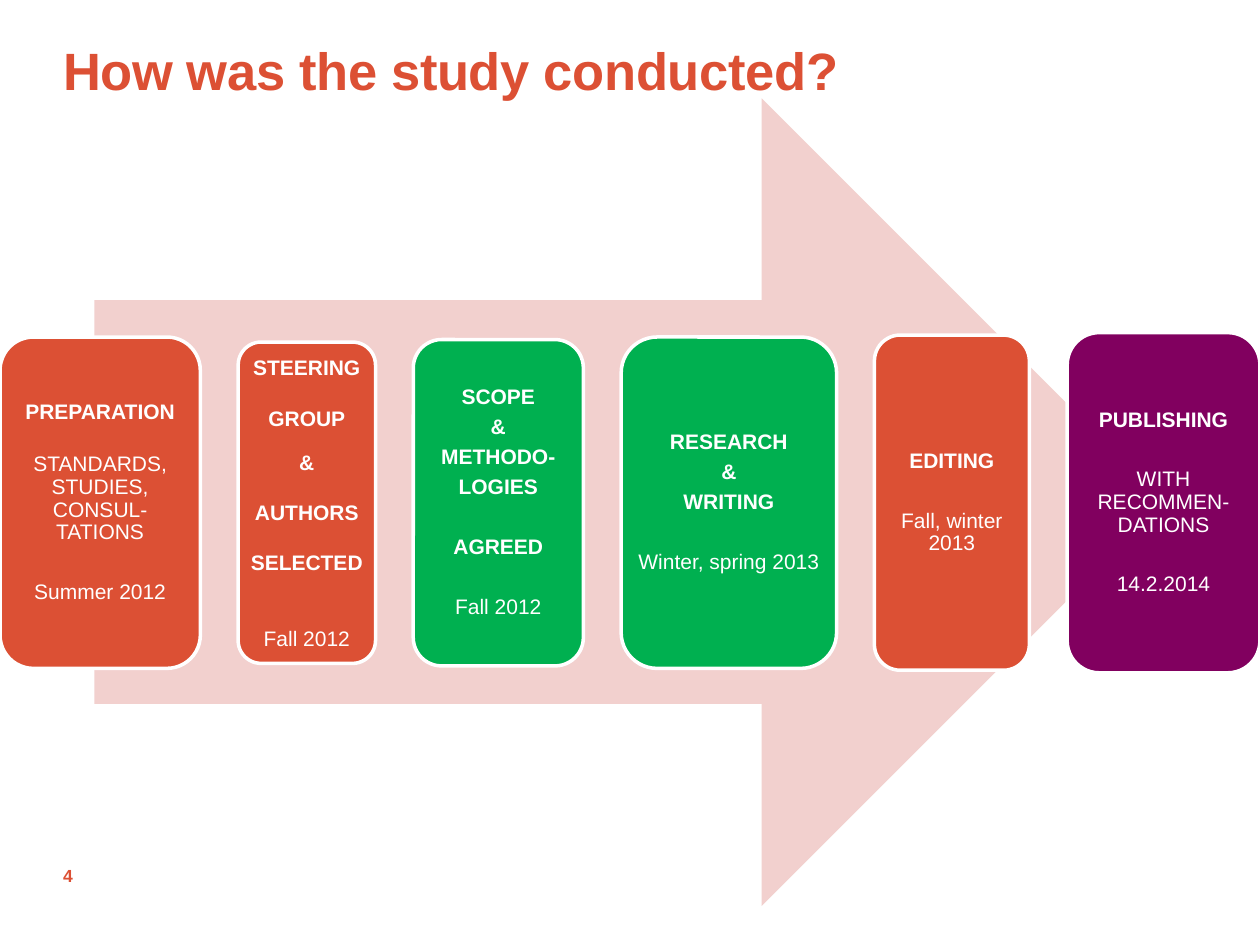
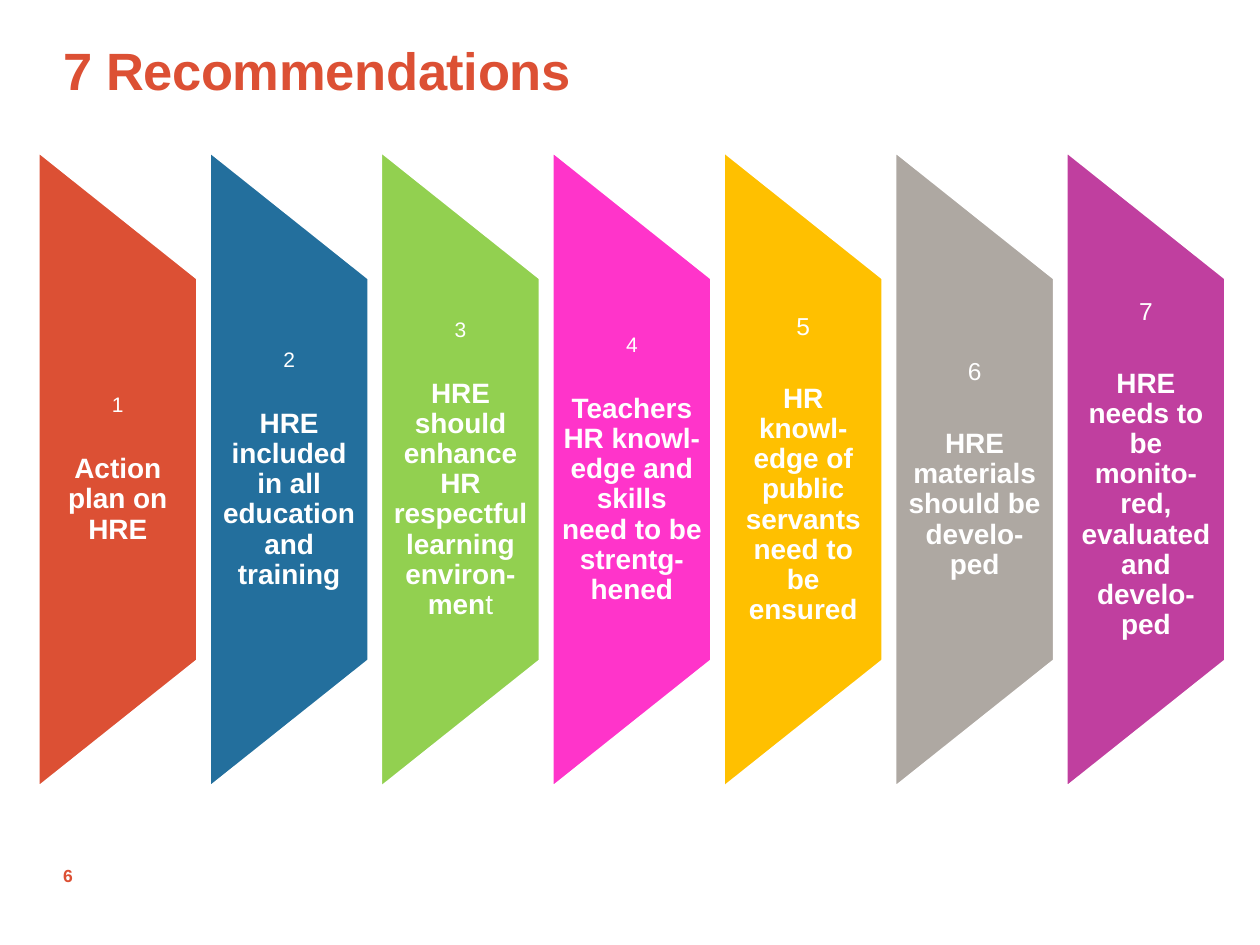
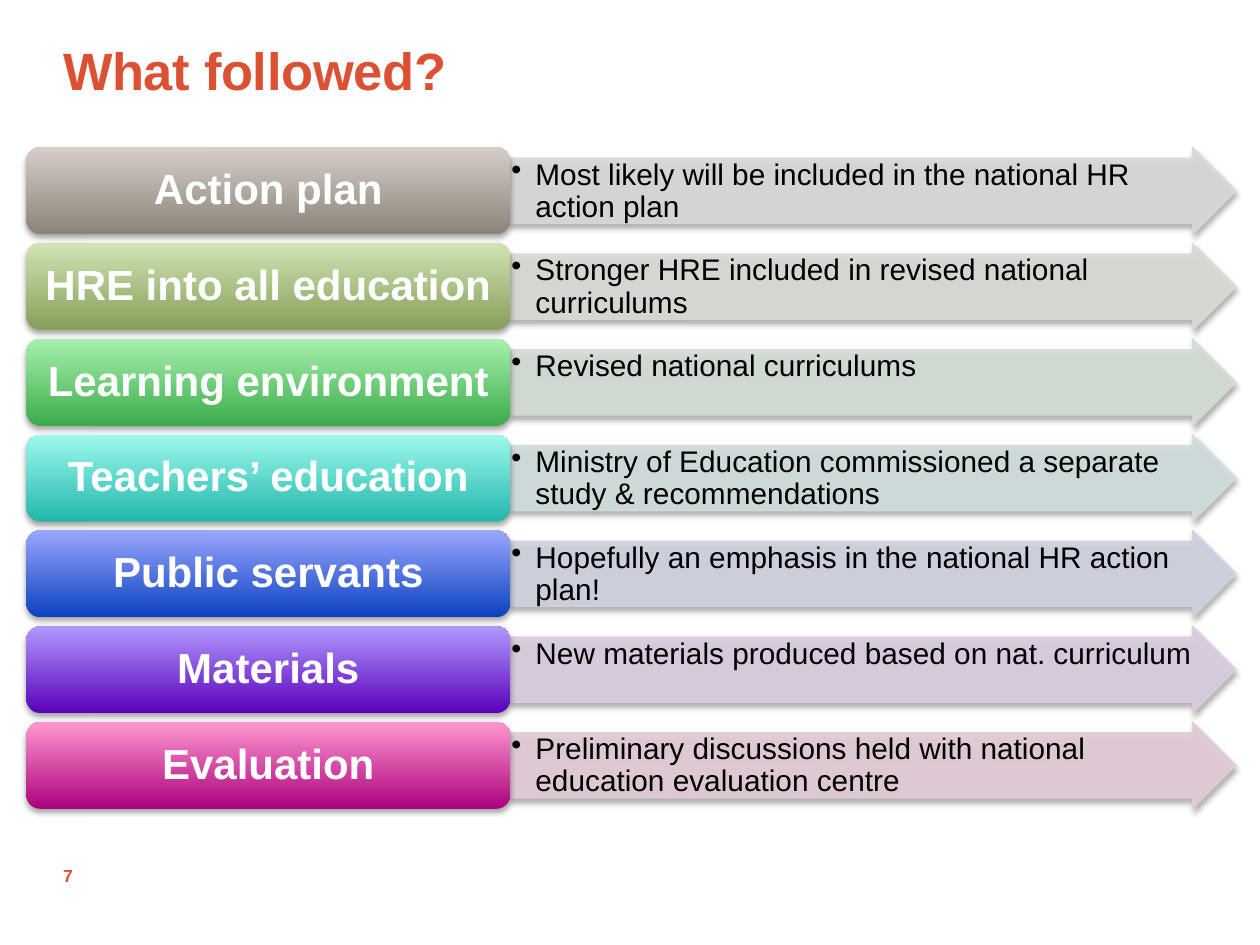
"""Build three slides on a human rights education study: process, recommendations, follow-up."""
from lxml import etree
from pptx import Presentation
from pptx import util as u
from pptx.dml.color import RGBColor
from pptx.enum import shapes, text
from pptx.oxml.ns import qn

RED, GREEN, PURPLE, WHITE, BLACK = "DC5034", "00B050", "81005F", "FFFFFF", "000000"
SHAPE = shapes.MSO_SHAPE
CENTER, LEFT = text.PP_ALIGN.CENTER, text.PP_ALIGN.LEFT
MIDDLE, TOP = text.MSO_ANCHOR.MIDDLE, text.MSO_ANCHOR.TOP


def color(value):
    return RGBColor.from_string(value)


def apply(target, values):
    for name, value in values.items():
        setattr(target, name, value)


class Deck:
    font = "Arial"

    def __init__(self):
        self.deck = Presentation()
        apply(self.deck, {"slide_width": u.Inches(10), "slide_height": u.Inches(7.5)})
        self.page = None

    def new_page(self, title, number):
        self.page = self.deck.slides.add_slide(self.deck.slide_layouts[5])
        box = self.page.shapes.title
        apply(box, dict(zip(("left", "top", "width", "height"), map(u.Inches, (0.5, 0.3, 9, 1.16)))))
        heading = {"size": 30, "bold": True, "ink": RED, "align": LEFT}
        self.set_text(box, [(title, heading)], anchor=TOP, insets=(0, 0))
        for properties in box.element.iter(qn("a:rPr")):
            properties.set("spc", "-20")
        self.label(0.5, 6.75, 0.71, 0.4, [(str(number), {**heading, "size": 10})], insets=(0, 0))

    def set_text(self, box, paragraphs, anchor=MIDDLE, insets=(0.1, 0.05)):
        frame = box.text_frame
        side, edge = map(u.Inches, insets)
        apply(frame, {"word_wrap": True, "auto_size": text.MSO_AUTO_SIZE.NONE,
                      "vertical_anchor": anchor, "margin_left": side, "margin_right": side,
                      "margin_top": edge, "margin_bottom": edge})
        for index, (words, style) in enumerate(paragraphs):
            para = frame.add_paragraph() if index else frame.paragraphs[0]
            self.paragraph(para, words, **style)

    def paragraph(self, para, words, size=12, bold=False, ink=WHITE, align=CENTER,
                  gap=0, lines=1, after=0, bullet=False):
        if bullet:
            properties = para._p.get_or_add_pPr()
            properties.set("marL", str(u.Inches(0.19)))
            properties.set("indent", str(-u.Inches(0.19)))
            etree.SubElement(properties, qn("a:buChar")).set("char", "•")
        apply(para, {"alignment": align, "line_spacing": lines,
                     "space_before": u.Pt(gap), "space_after": u.Pt(size * after)})
        strong, _, light = words.partition("|")
        for content, weight in ((strong, bold), (light, False)):
            if content:
                span = para.add_run()
                span.text = content
                apply(span.font, {"name": self.font, "size": u.Pt(size), "bold": weight})
                span.font.color.rgb = color(ink)

    def label(self, left, top, width, height, paragraphs, **options):
        box = self.page.shapes.add_textbox(*map(u.Inches, (left, top, width, height)))
        self.set_text(box, paragraphs, **options)

    def shape(self, kind, left, top, width, height, fill, line=None, weight=2):
        box = self.page.shapes.add_shape(kind, *map(u.Inches, (left, top, width, height)))
        box.shadow.inherit = False
        if isinstance(fill, tuple):
            box.fill.gradient()
            box.fill.gradient_angle = 90
            for stop, value in zip(box.fill.gradient_stops, fill):
                stop.color.rgb = color(value)
        else:
            box.fill.solid()
            box.fill.fore_color.rgb = color(fill)
        if line:
            box.line.color.rgb = color(line)
            box.line.width = u.Pt(weight)
        else:
            box.line.fill.background()
        return box

    def fade(self, box, percent):
        for value in box.element.iter(qn("a:srgbClr")):
            etree.SubElement(value, qn("a:alpha")).set("val", str(percent * 1000))

    def cast_shadow(self, box):
        effects = next(box.element.iter(qn("a:effectLst")))
        shadow = etree.SubElement(effects, qn("a:outerShdw"), blurRad=str(u.Pt(3.1)),
                                  dist=str(u.Pt(1.8)), dir="5400000", rotWithShape="0")
        ink = etree.SubElement(shadow, qn("a:srgbClr"), val=BLACK)
        etree.SubElement(ink, qn("a:alpha")).set("val", "35000")


TIGHT = {"lines": 0.9, "after": 0.35}
LOOSE = {"lines": 1, "after": 0}

STEPS = [
    (1.59, 2.63, RED, TIGHT, [("PREPARATION", True, 0),
                              ("STANDARDS, STUDIES, CONSUL-TATIONS", False, 12.8),
                              ("Summer 2012", False, 17)]),
    (1.09, 2.55, RED, LOOSE, [("STEERING", True, 0), ("GROUP", True, 14.4), ("&", True, 10.8),
                              ("AUTHORS", True, 14.4), ("SELECTED", True, 14.4),
                              ("Fall 2012", False, 28.8)]),
    (1.35, 2.59, GREEN, TIGHT, [("SCOPE", True, 0), ("&", True, 0), ("METHODO-", True, 0),
                                ("LOGIES", True, 0), ("AGREED", True, 17),
                                ("Fall 2012", False, 17)]),
    (1.71, 2.63, GREEN, TIGHT, [("RESEARCH", True, 0), ("&", True, 0), ("WRITING", True, 0),
                                ("Winter, spring 2013", False, 17)]),
    (1.23, 2.66, RED, TIGHT, [("EDITING", True, 0), ("Fall, winter 2013", False, 17)]),
    (1.53, 2.7, PURPLE, TIGHT, [("PUBLISHING", True, 0),
                                ("WITH RECOMMEN-DATIONS", False, 17),
                                ("14.2.2014", False, 17)]),
]

RECOMMENDATIONS = [
    (RED, 12, "Action plan on HRE"),
    ("236F9D", 12, "HRE included in all education and training"),
    ("92D050", 12, "HRE should enhance HR respectful learning environ-men|t"),
    ("FF34CA", 12, "Teachers HR knowl-edge and skills need to be strentg-hened"),
    ("FFC000", 14, "HR knowl-edge of public servants need to be ensured"),
    ("AEA8A2", 14, "HRE materials should be develo-ped"),
    ("C03F9F", 14, "HRE needs to be monito-red, evaluated and develo-ped"),
]

OUTCOMES = [
    ("Action plan", ("8C847A", "D4CEC7"), "DAD9D7",
     "Most likely will be included in the national HR action plan"),
    ("HRE into all education", ("869E59", "D1E4B4"), "D9DBD5",
     "Stronger HRE included in revised national curriculums"),
    ("Learning environment", ("3CAC4B", "A7F0AD"), "D3DDD5",
     "Revised national curriculums"),
    ("Teachers’ education", ("22B7AB", "9EF9ED"), "D1DEDE",
     "Ministry of Education commissioned a separate study & recommendations"),
    ("Public servants", ("0B41BF", "99A7FE"), "CFD2E0",
     "Hopefully an emphasis in the national HR action plan!"),
    ("Materials", ("5A00BB", "B199FF"), "DACDE1",
     "New materials produced based on nat. curriculum"),
    ("Evaluation", ("AC007F", "FF98CE"), "E3CBD8",
     "Preliminary discussions held with national education evaluation centre"),
]


def process_page(deck):
    deck.new_page("How was the study conducted?", 4)
    deck.shape(SHAPE.RIGHT_ARROW, 0.75, 0.78, 8.5, 6.41, "F2D0CE")
    left, middle, gutter = 0, 3.99, 0.3
    for width, height, fill, spacing, lines in STEPS:
        card = deck.shape(SHAPE.ROUNDED_RECTANGLE, left, middle - height / 2,
                          width, height, fill, WHITE)
        deck.set_text(card, [(words, {"bold": bold, "gap": gap, **spacing})
                             for words, bold, gap in lines], insets=(0.04, 0.04))
        left += width + gutter


def recommendations_page(deck):
    deck.new_page("7 Recommendations", 6)
    length, width, pitch = 5.06, 1.27, 1.36
    for index, (fill, size, words) in enumerate(RECOMMENDATIONS):
        left = 0.3 + index * pitch
        panel = deck.shape(SHAPE.FLOWCHART_MANUAL_OPERATION, left + (width - length) / 2, 3.09,
                           length, width, fill, WHITE)
        panel.rotation = 270
        deck.label(left, 2.21, width, 3.04, [
            (str(index + 1), {"size": size, **TIGHT}),
            (words, {"size": 16, "bold": True, "gap": size * 1.42, **TIGHT}),
        ], insets=(0.08 if size == 12 else 0.1, 0))


def outcomes_page(deck):
    deck.new_page("What followed?", 7)
    height, pitch = 0.69, 0.76
    for index, (topic, gradient, tint, words) in enumerate(OUTCOMES):
        top = 1.17 + index * pitch
        arrow = deck.shape(SHAPE.RIGHT_ARROW, 4.05, top, 5.76, height, tint, tint, 0.75)
        arrow.adjustments[0] = 0.75
        deck.fade(arrow, 90)
        deck.set_text(arrow, [(words, {"size": 17, "ink": BLACK, "align": LEFT, "bullet": True,
                                       "lines": 0.9, "after": 0.15})],
                      anchor=TOP, insets=(0.01, 0.01))
        tab = deck.shape(SHAPE.ROUNDED_RECTANGLE, 0.21, top, 3.84, height, gradient)
        deck.set_text(tab, [(topic, {"size": 24, "bold": True, **TIGHT})])
        for box in (arrow, tab):
            deck.cast_shadow(box)


def main():
    deck = Deck()
    process_page(deck)
    recommendations_page(deck)
    outcomes_page(deck)
    deck.deck.save("out.pptx")


if __name__ == "__main__":
    main()
